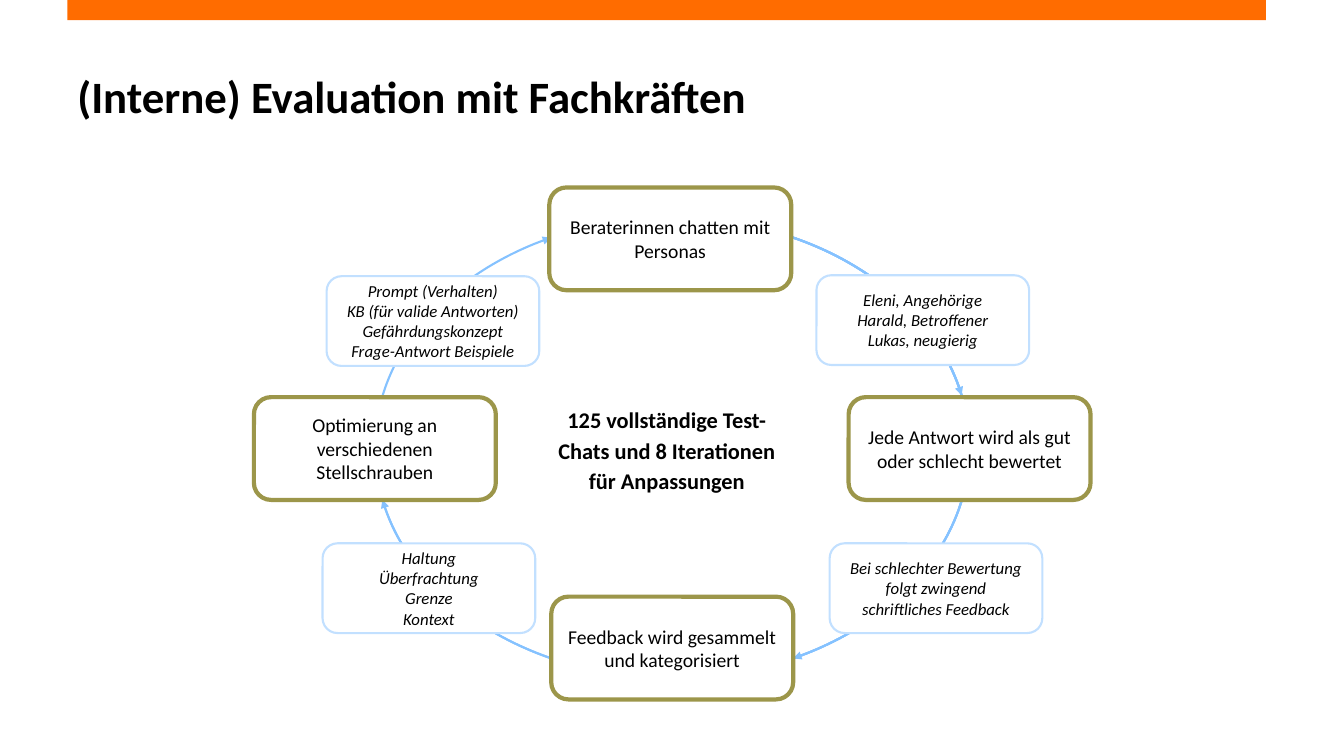
import dataclasses

import lxml.etree
import pptx
import pptx.dml.color
import pptx.enum.shapes
import pptx.enum.text
import pptx.oxml.ns
import pptx.util

Pt = pptx.util.Pt
SHAPE = pptx.enum.shapes.MSO_SHAPE
ALIGN = pptx.enum.text.PP_ALIGN
ANCHOR = pptx.enum.text.MSO_ANCHOR

COLORS = {
    "bar": "FF6C00",
    "text": "000000",
    "box": "FFFFFF",
    "step": "9C964A",
    "note": "C2E0FF",
    "arc": "85C2FF",
}
MARGIN, CONTENT_WIDTH = 48.2, 856.1


@dataclasses.dataclass(frozen=True)
class BoxStyle:
    width: float
    height: float
    color: str
    line_width: float
    size: float
    italic: bool


@dataclasses.dataclass(frozen=True)
class Box:
    style: BoxStyle
    left: float
    top: float
    lines: tuple[str, ...]


STEP = BoxStyle(172.8, 73.4, "step", 3, 14, False)
NOTE = BoxStyle(151.9, 64.1, "note", 1.5, 12, True)

BOXES = (
    Box(STEP, 392.4, 133.9, ("Beraterinnen chatten mit Personas",)),
    Box(STEP, 606.2, 283.7, ("Jede Antwort wird als gut oder schlecht bewertet",)),
    Box(STEP, 393.8, 426.2, ("Feedback wird gesammelt und kategorisiert",)),
    Box(STEP, 181.4, 283.7, ("Optimierung an verschiedenen Stellschrauben",)),
    Box(NOTE, 583.2, 196.6, ("Eleni, Angehörige", "Harald, Betroffener", "Lukas, neugierig")),
    Box(NOTE, 592.6, 388.1,
        ("Bei schlechter Bewertung folgt zwingend schriftliches Feedback",)),
    Box(NOTE, 230.4, 388.1, ("Haltung", "Überfrachtung", "Grenze", "Kontext")),
    Box(NOTE, 233.3, 197.3,
        ("Prompt (Verhalten)", "KB (für valide Antworten)", "Gefährdungskonzept",
         "Frage-Antwort Beispiele")),
)

# Each arc runs clockwise from the top to the edge of one step box.
ARC_ENDS = (240.05, 349.67, 60.09, 169.88)


def rgb(name: str) -> pptx.dml.color.RGBColor:
    return pptx.dml.color.RGBColor.from_string(COLORS[name])


def style_paragraph(p, size: float, bold: bool = False, italic: bool = False) -> None:
    p.font.name = "Calibri"
    p.font.size = Pt(size)
    p.font.bold = bold
    p.font.italic = italic
    p.font.color.rgb = rgb("text")


def add_bar(s) -> None:
    bar = s.shapes.add_shape(SHAPE.RECTANGLE, Pt(MARGIN), Pt(0), Pt(CONTENT_WIDTH), Pt(14.4))
    bar.shadow.inherit = False
    bar.fill.solid()
    bar.fill.fore_color.rgb = rgb("bar")
    bar.line.fill.background()


def add_bold_text(s, left: float, top: float, width: float, height: float,
                  text: str, size: float):
    """Add a wrapped bold text box and return its text frame."""
    tf = s.shapes.add_textbox(Pt(left), Pt(top), Pt(width), Pt(height)).text_frame
    tf.word_wrap = True
    p = tf.paragraphs[0]
    p.text = text
    style_paragraph(p, size, bold=True)
    return tf


def add_arc(s, end: float) -> None:
    """Add an arrow-headed arc ending at an angle in degrees, clockwise from the right."""
    arc = s.shapes.add_shape(SHAPE.ARC, Pt(267.8), Pt(155.5), Pt(424.8), Pt(329))
    arc.shadow.inherit = False
    # An adjustment unit is 100000 and a degree is 60000.
    arc.adjustments[1] = end * 0.6
    arc.fill.background()
    arc.line.color.rgb = rgb("arc")
    arc.line.width = Pt(1.5)
    ln = arc.line._get_or_add_ln()
    lxml.etree.SubElement(ln, pptx.oxml.ns.qn("a:tailEnd"), type="triangle")


def add_box(s, box: Box) -> None:
    style = box.style
    sp = s.shapes.add_shape(SHAPE.ROUNDED_RECTANGLE, Pt(box.left), Pt(box.top),
                            Pt(style.width), Pt(style.height))
    sp.shadow.inherit = False
    sp.fill.solid()
    sp.fill.fore_color.rgb = rgb("box")
    sp.line.color.rgb = rgb(style.color)
    sp.line.width = Pt(style.line_width)
    tf = sp.text_frame
    tf.word_wrap = True
    tf.vertical_anchor = ANCHOR.MIDDLE
    tf.text = "\n".join(box.lines)
    for p in tf.paragraphs:
        p.alignment = ALIGN.CENTER
        style_paragraph(p, style.size, italic=style.italic)


def main() -> None:
    prs = pptx.Presentation()
    prs.slide_width, prs.slide_height = Pt(960), Pt(540)
    s = prs.slides.add_slide(prs.slide_layouts[6])

    add_bar(s)
    title = add_bold_text(s, MARGIN, 31.7, CONTENT_WIDTH, 73.4,
                          "(Interne) Evaluation mit Fachkräften", 32)
    title.vertical_anchor = ANCHOR.MIDDLE

    summary = add_bold_text(s, 384.5, 283.7, 183.6, 67,
                            "125 vollständige Test-Chats und 8 Iterationen für Anpassungen", 16)
    summary.paragraphs[0].alignment = ALIGN.CENTER
    summary.paragraphs[0].line_spacing = Pt(22)

    for end in ARC_ENDS:
        add_arc(s, end)
    for box in BOXES:
        add_box(s, box)

    prs.save("out.pptx")


if __name__ == "__main__":
    main()
